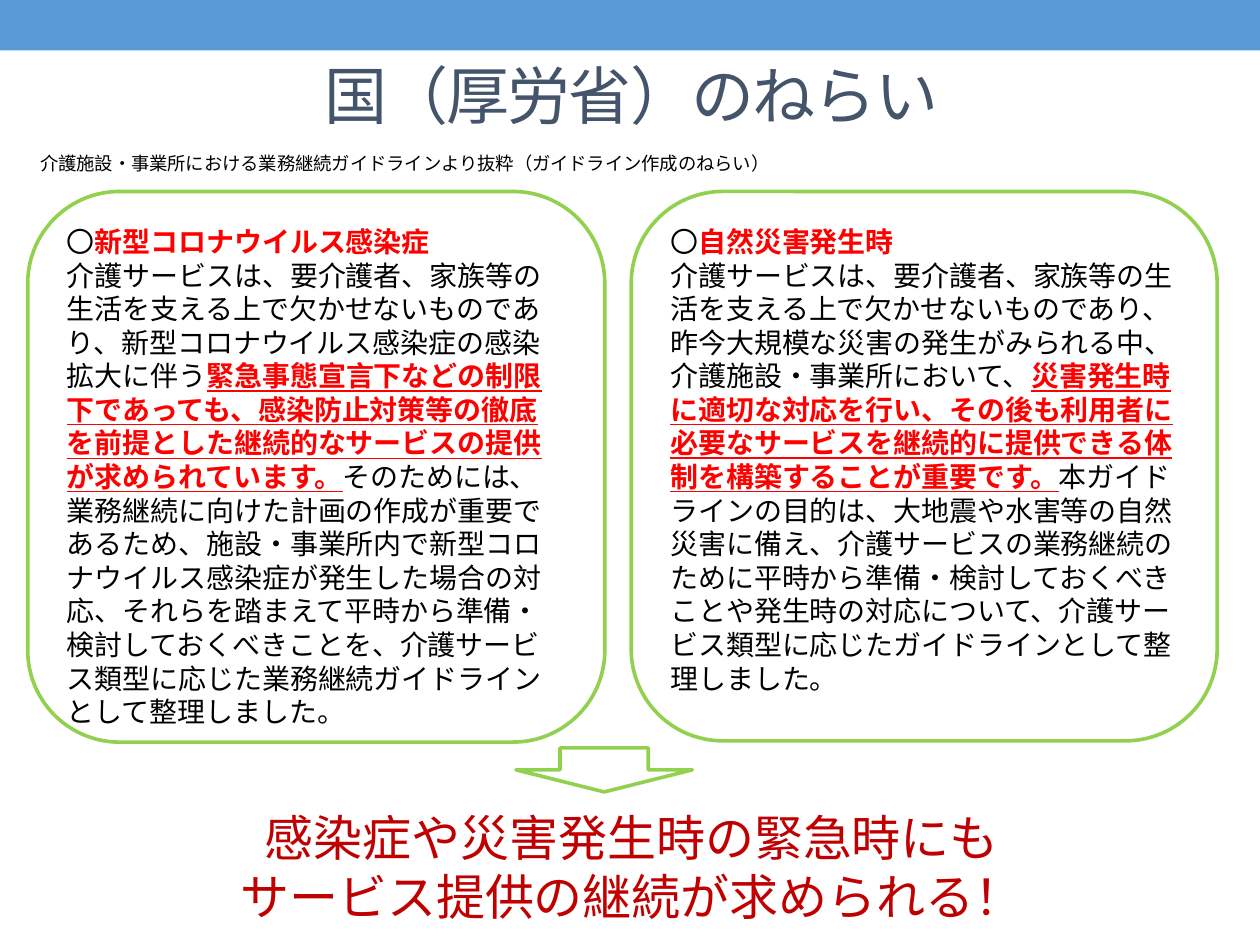
import pptx
import pptx.util
from pptx.dml.color import RGBColor
from pptx.enum.shapes import MSO_SHAPE
from pptx.enum.text import MSO_ANCHOR, PP_ALIGN
from pptx.util import Inches, Pt

BLUE = RGBColor(0x5B, 0x9B, 0xD5)
SLATE = RGBColor(0x44, 0x54, 0x6A)
GREEN = RGBColor(0x92, 0xD0, 0x50)
RED = RGBColor(0xFF, 0x00, 0x00)
DARK_RED = RGBColor(0xC0, 0x00, 0x00)
BLACK = RGBColor(0x00, 0x00, 0x00)
WHITE = RGBColor(0xFF, 0xFF, 0xFF)
LATIN_FONT = "Arial"
JAPANESE_FONT = "Noto Sans CJK JP"
LINE_HEIGHT = 1.2

# Content
TITLE = "国（厚労省）のねらい"
SOURCE_NOTE = "介護施設・事業所における業務継続ガイドラインより抜粋（ガイドライン作成のねらい）"
CONCLUSION = ["感染症や災害発生時の緊急時にも", "サービス提供の継続が求められる！"]
PANELS = [
    {
        "box": (0.22, 1.52, 4.58, 4.37),
        "heading": "新型コロナウイルス感染症",
        "before": "介護サービスは、要介護者、家族等の生活を支える上で欠かせないものであり、"
                  "新型コロナウイルス感染症の感染拡大に伴う",
        "key": "緊急事態宣言下などの制限下であっても、感染防止対策等の徹底を前提とした"
               "継続的なサービスの提供が求められています。",
        "after": "そのためには、業務継続に向けた計画の作成が重要であるため、"
                 "施設・事業所内で新型コロナウイルス感染症が発生した場合の対応、"
                 "それらを踏まえて平時から準備・検討しておくべきことを、"
                 "介護サービス類型に応じた業務継続ガイドラインとして整理しました。",
    },
    {
        "box": (5.01, 1.52, 4.65, 4.36),
        "heading": "自然災害発生時",
        "before": "介護サービスは、要介護者、家族等の生活を支える上で欠かせないものであり、"
                  "昨今大規模な災害の発生がみられる中、介護施設・事業所において、",
        "key": "災害発生時に適切な対応を行い、その後も利用者に必要なサービスを"
               "継続的に提供できる体制を構築することが重要です。",
        "after": "本ガイドラインの目的は、大地震や水害等の自然災害に備え、"
                 "介護サービスの業務継続のために平時から準備・検討しておくべきことや"
                 "発生時の対応について、介護サービス類型に応じたガイドラインとして整理しました。",
    },
]


def inches(box):
    return [Inches(value) for value in box]


def add_shape(slide, kind, box, fill, line=None):
    shape = slide.shapes.add_shape(kind, *inches(box))
    shape.shadow.inherit = False
    shape.fill.solid()
    shape.fill.fore_color.rgb = fill
    if line is None:
        shape.line.fill.background()
    else:
        shape.line.color.rgb = line
        shape.line.width = Pt(2.08)
    return shape


def write(text_frame, paragraphs, size, font=LATIN_FONT, align=PP_ALIGN.LEFT):
    """Each paragraph is a list of (text, colour, bold, underline) runs."""
    text_frame.word_wrap = True
    for index, runs in enumerate(paragraphs):
        paragraph = text_frame.add_paragraph() if index else text_frame.paragraphs[0]
        paragraph.alignment = align
        paragraph.line_spacing = Pt(size * LINE_HEIGHT)
        for text, color, bold, underline in runs:
            run = paragraph.add_run()
            run.text = text
            run.font.name = font
            run.font.size = Pt(size)
            run.font.color.rgb = color
            run.font.bold = bold
            run.font.underline = underline


def add_text(slide, box, paragraphs, size, **style):
    text_box = slide.shapes.add_textbox(*inches(box))
    write(text_box.text_frame, paragraphs, size, **style)


def main():
    presentation = pptx.Presentation()
    presentation.slide_width, presentation.slide_height = Inches(10), Inches(7.5)
    slide = presentation.slides.add_slide(presentation.slide_layouts[5])

    # Top band and title
    add_shape(slide, MSO_SHAPE.RECTANGLE, (0, 0, 10, 0.4), BLUE)
    title = slide.shapes.title
    title.left, title.top, title.width, title.height = inches((0.51, 0.41, 9, 0.68))
    title.text_frame.vertical_anchor = MSO_ANCHOR.MIDDLE
    write(title.text_frame, [[(TITLE, SLATE, False, False)]], 36, align=PP_ALIGN.CENTER)
    # Letter spacing of -1 pt
    title.text_frame.paragraphs[0].runs[0].font._element.set("spc", "-100")

    # Source note
    add_text(slide, (0.22, 1.16, 6.54, 0.27), [[(SOURCE_NOTE, BLACK, False, False)]], 10.5)

    # Two guideline panels
    for panel in PANELS:
        shape = add_shape(slide, MSO_SHAPE.ROUNDED_RECTANGLE, panel["box"], WHITE, GREEN)
        shape.text_frame.vertical_anchor = MSO_ANCHOR.TOP
        write(shape.text_frame, [
            [("〇", BLACK, False, False), (panel["heading"], RED, True, False)],
            [(panel["before"], BLACK, False, False),
             (panel["key"], RED, True, True),
             (panel["after"], BLACK, False, False)],
        ], 16)

    # Arrow down to the conclusion
    arrow = add_shape(slide, MSO_SHAPE.RIGHT_ARROW, (4.62, 5.41, 0.35, 1.4), WHITE, GREEN)
    arrow.rotation = 90
    add_text(slide, (0.8, 6.36, 8.43, 1.04),
             [[(line, DARK_RED, False, False)] for line in CONCLUSION],
             28, font=JAPANESE_FONT, align=PP_ALIGN.CENTER)

    presentation.save("out.pptx")


if __name__ == "__main__":
    main()
